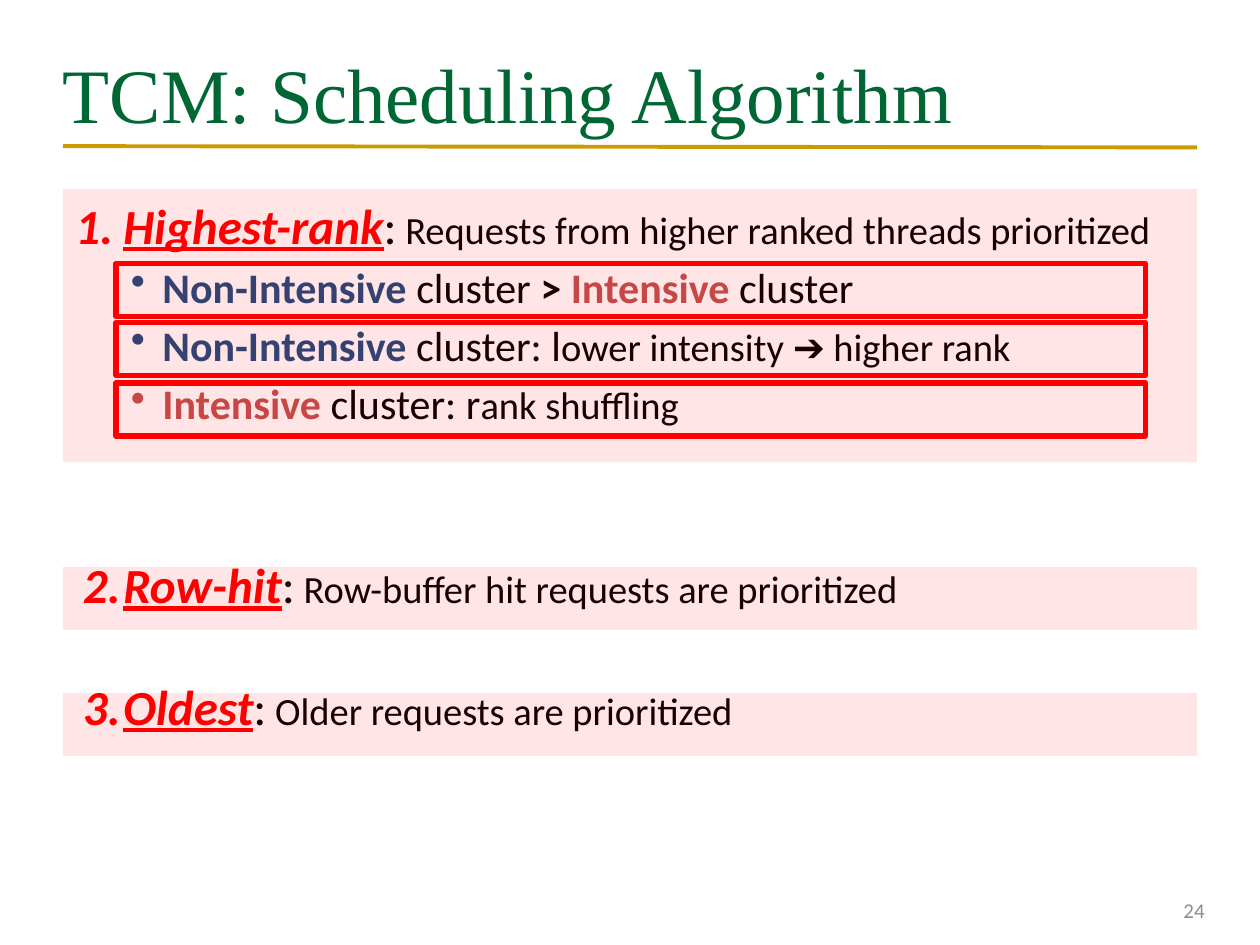
from lxml import etree
from pptx import Presentation
from pptx.dml.color import RGBColor
from pptx.enum import shapes, text
from pptx.oxml.ns import qn
from pptx.util import Inches, Pt

GREEN = RGBColor(0x00, 0x66, 0x33)
GOLD = RGBColor(0xCC, 0x99, 0x00)
RED = RGBColor(0xFF, 0x00, 0x00)
BLUE = RGBColor(0x1F, 0x49, 0x7D)
BRICK = RGBColor(0xC0, 0x50, 0x4D)
BLACK = RGBColor(0x00, 0x00, 0x00)
GRAY = RGBColor(0x8C, 0x8C, 0x8C)

LEFT, WIDTH = 0.5, 9


def add_text_box(page, left, top, width, height, side_inset=0.1,
                 anchor=text.MSO_ANCHOR.MIDDLE):
    box = page.shapes.add_textbox(Inches(left), Inches(top), Inches(width), Inches(height))
    frame = box.text_frame
    frame.word_wrap = True
    frame.vertical_anchor = anchor
    frame.margin_left = frame.margin_right = Inches(side_inset)
    return frame


def add_span(para, words, size=24, color=BLACK, font="Calibri", bold=False,
             italic=False, underline=False):
    span = para.add_run()
    span.text = words
    span.font.name = font
    span.font.size = Pt(size)
    span.font.color.rgb = color
    span.font.bold = bold
    span.font.italic = italic
    span.font.underline = underline


def add_item(frame, space, margin, hang, marker, **marker_values):
    """Start a list paragraph; marker is the bullet element, such as a:buChar."""
    first = frame.paragraphs[0]
    para = frame.add_paragraph() if first.runs else first
    para.space_before = Pt(space)
    props = para._p.get_or_add_pPr()
    props.set("marL", str(Inches(margin)))
    props.set("indent", str(-Inches(hang)))
    bullet = etree.SubElement(props, qn(marker))
    for name, value in marker_values.items():
        bullet.set(name, value)
    return para


def add_rule(frame, number, name, meaning, space, hang=0.32):
    para = add_item(frame, space, 0.38, hang, "a:buAutoNum",
                    type="arabicPeriod", startAt=str(number))
    add_span(para, name, size=28, color=RED, bold=True, italic=True, underline=True)
    add_span(para, ":", size=28)
    add_span(para, " " + meaning, size=22)


def add_detail(frame, *spans):
    para = add_item(frame, 4.4, 0.69, 0.25, "a:buChar", char="•")
    for words, style in spans:
        add_span(para, words, **style)


def add_rectangle(page, left, top, width, height):
    box = page.shapes.add_shape(shapes.MSO_SHAPE.RECTANGLE, Inches(left), Inches(top),
                                Inches(width), Inches(height))
    box.shadow.inherit = False
    return box


def add_band(page, top, height):
    """Place a see-through red band over a rule."""
    band = add_rectangle(page, LEFT, top, WIDTH, height)
    band.fill.solid()
    band.fill.fore_color.rgb = RED
    color = band.fill._xPr.find(qn("a:solidFill"))[0]
    etree.SubElement(color, qn("a:alpha")).set("val", "10000")
    band.line.fill.background()


def add_frame(page, top):
    frame = add_rectangle(page, 0.92, top, 8.17, 0.42)
    frame.fill.background()
    frame.line.color.rgb = RED
    frame.line.width = Pt(3)


def add_title(page, words):
    line = page.shapes.add_connector(shapes.MSO_CONNECTOR.STRAIGHT, Inches(LEFT), Inches(1.16),
                                     Inches(LEFT + WIDTH), Inches(1.17))
    line.line.color.rgb = GOLD
    line.line.width = Pt(2.25)
    etree.SubElement(line._element.spPr, qn("a:effectLst"))
    title = add_text_box(page, LEFT, 0.3, WIDTH, 0.87, side_inset=0)
    add_span(title.paragraphs[0], words, size=44, color=GREEN, font="Times New Roman")


def add_rules(page):
    body = add_text_box(page, LEFT, 1.5, 9.25, 4.58, anchor=text.MSO_ANCHOR.TOP)
    blue = {"color": BLUE, "bold": True}
    brick = {"color": BRICK, "bold": True}
    small = {"size": 22}

    add_rule(body, 1, "Highest-rank", "Requests from higher ranked threads prioritized",
             space=1.5, hang=0.38)
    add_detail(body, ("Non-Intensive", blue), (" cluster ", {}), ("> ", {"bold": True}),
               ("Intensive", brick), (" cluster", {}))
    add_detail(body, ("Non-Intensive ", blue), ("cluster: l", {}),
               ("ower intensity ➔ higher rank", small))
    add_detail(body, ("Intensive", brick), (" cluster: r", {}), ("ank shuffling", small))
    add_rule(body, 2, "Row-hit", "Row-buffer hit requests are prioritized", space=72)
    add_rule(body, 3, "Oldest", "Older requests are prioritized", space=36)


def add_page_number(page, number):
    frame = add_text_box(page, 7.33, 7.02, 2.33, 0.4)
    para = frame.paragraphs[0]
    para.alignment = text.PP_ALIGN.RIGHT
    add_span(para, number, size=12, color=GRAY)


def main():
    deck = Presentation()
    deck.slide_width, deck.slide_height = Inches(10), Inches(7.5)
    page = deck.slides.add_slide(deck.slide_layouts[6])

    add_title(page, "TCM: Scheduling Algorithm")
    add_rules(page)
    add_page_number(page, "24")
    for top, height in ((1.5, 2.17), (4.5, 0.5), (5.5, 0.5)):
        add_band(page, top, height)
    for top in (2.09, 2.56, 3.04):
        add_frame(page, top)

    deck.save("out.pptx")


if __name__ == "__main__":
    main()
